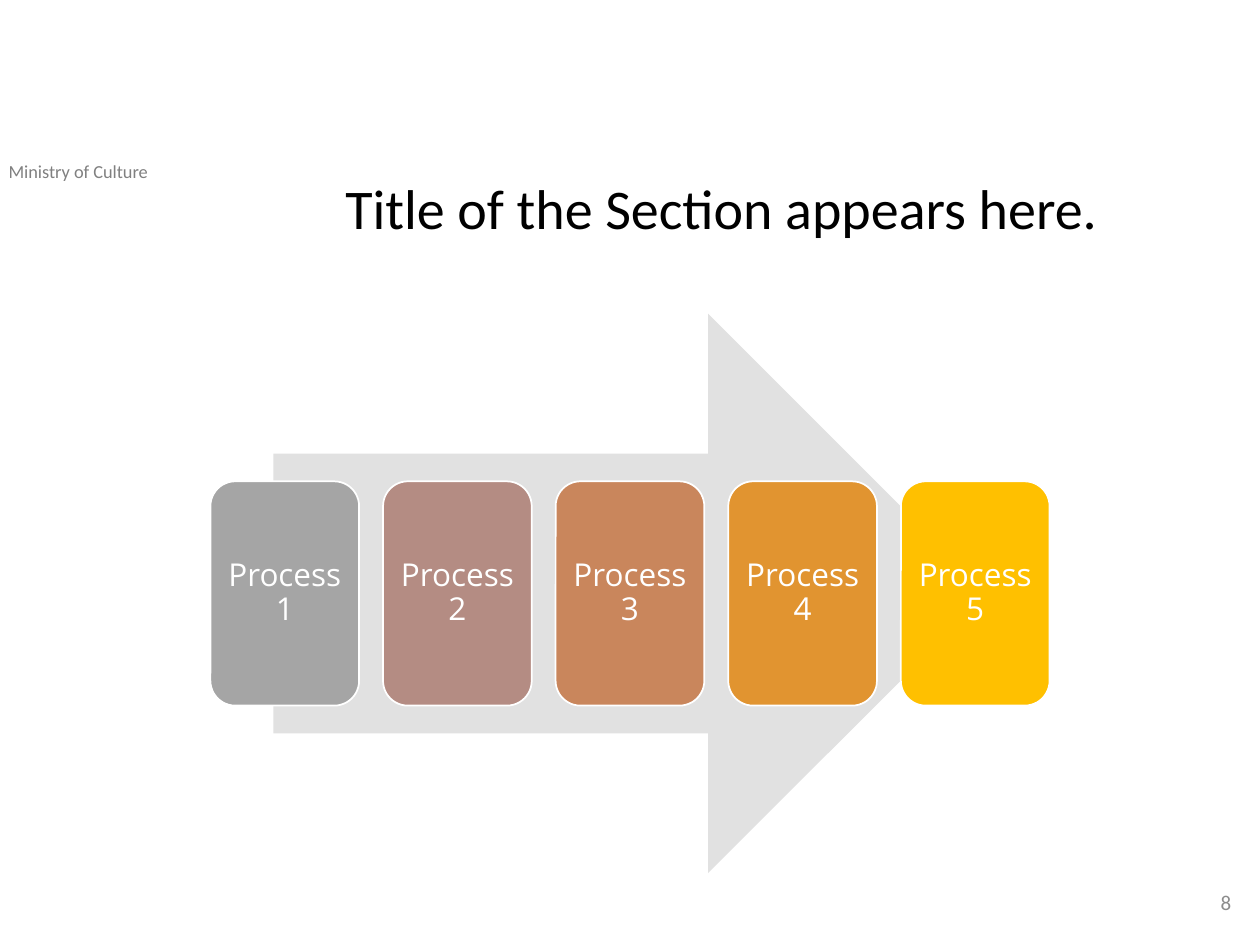
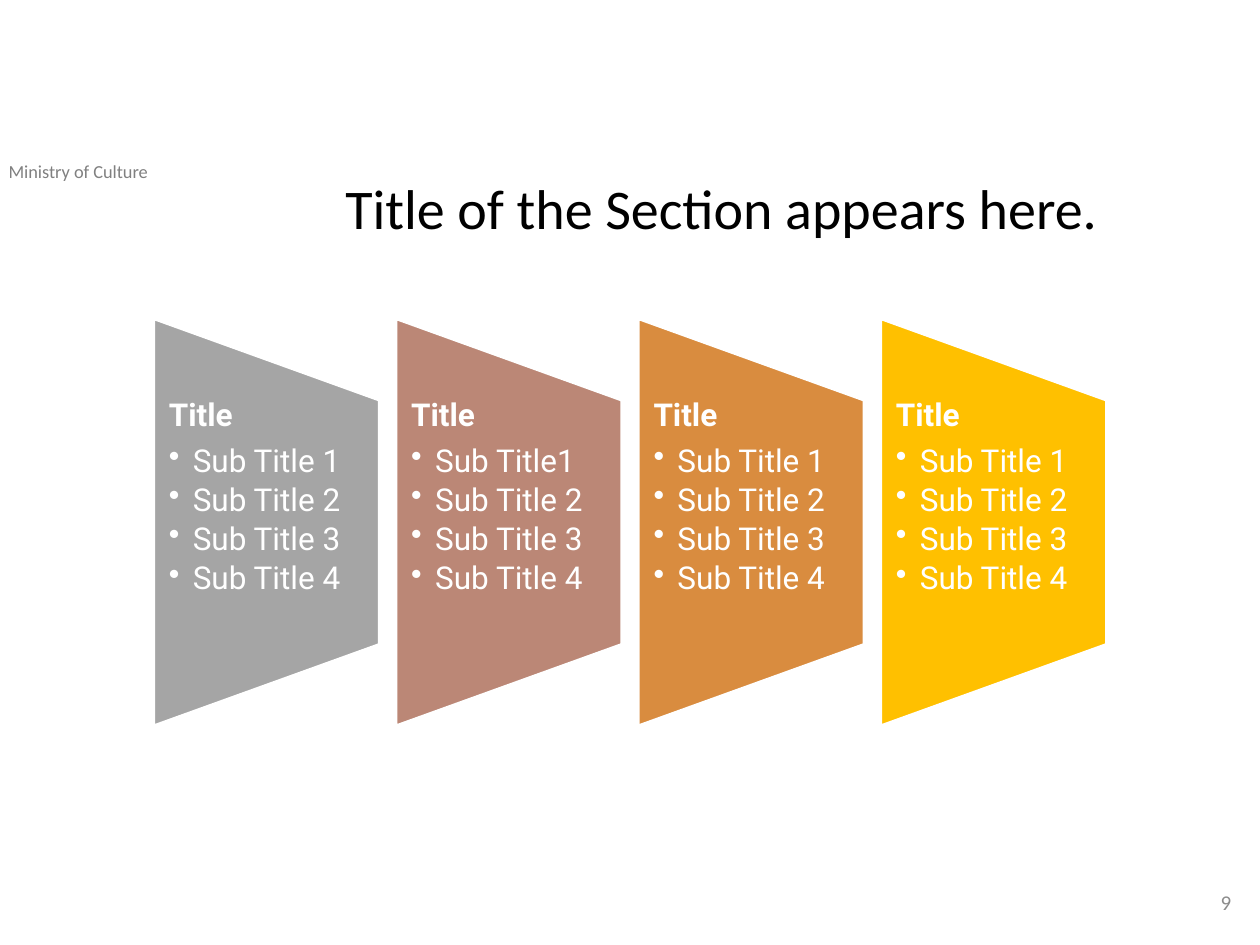
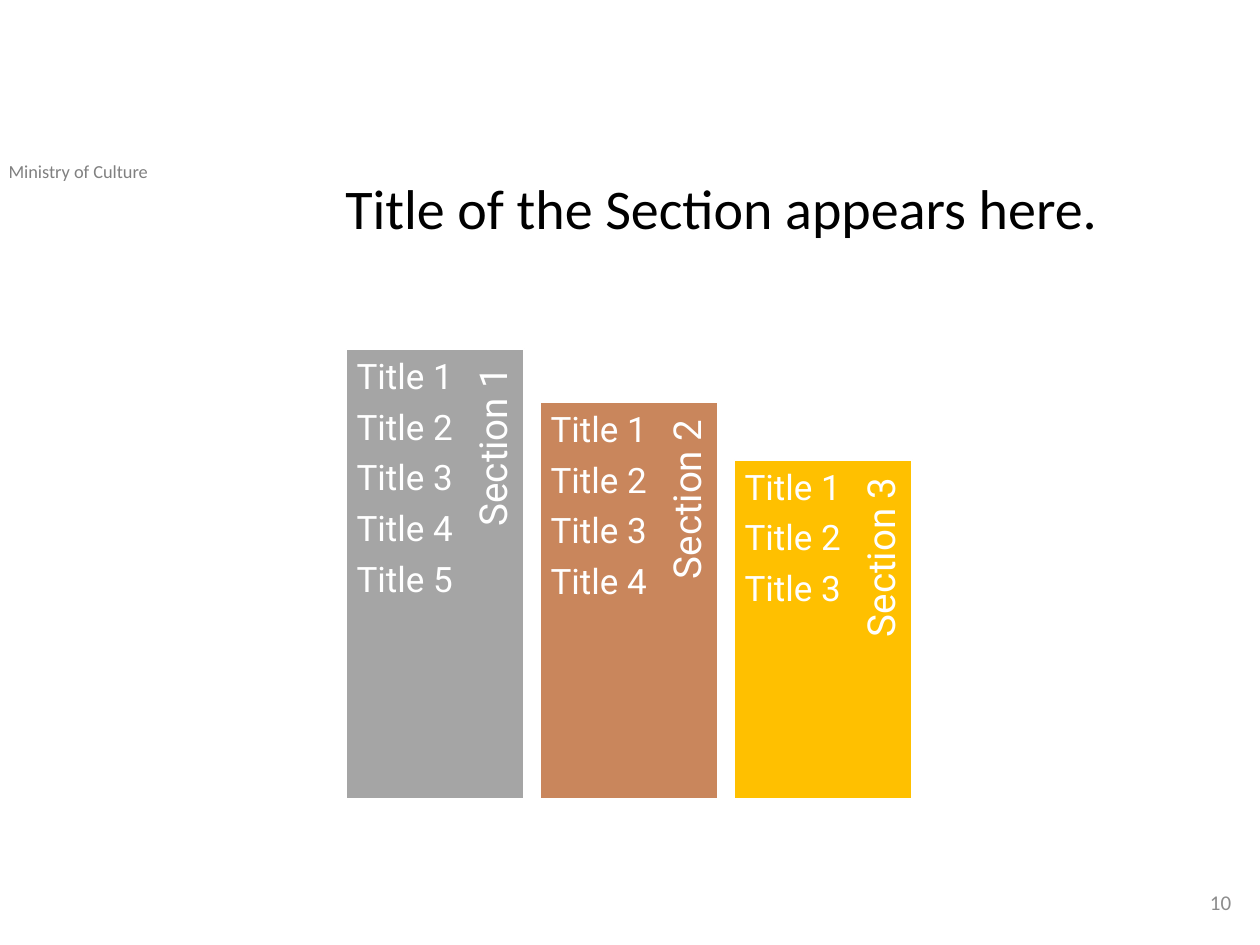
from pptx import Presentation
from pptx.dml.color import RGBColor
from pptx.enum.shapes import MSO_SHAPE
from pptx.enum.text import MSO_ANCHOR, MSO_AUTO_SIZE, PP_ALIGN
from pptx.oxml.ns import qn
from pptx.util import Inches, Pt
from lxml import etree

ARROW, ROUNDED = MSO_SHAPE.RIGHT_ARROW, MSO_SHAPE.ROUNDED_RECTANGLE
TRAPEZOID, RECTANGLE = MSO_SHAPE.FLOWCHART_MANUAL_OPERATION, MSO_SHAPE.RECTANGLE
TOP, MIDDLE = MSO_ANCHOR.TOP, MSO_ANCHOR.MIDDLE
LEFT, CENTER, RIGHT = PP_ALIGN.LEFT, PP_ALIGN.CENTER, PP_ALIGN.RIGHT

COLORS = {
    "text": "000000", "header": "808080", "number": "8C8C8C", "white": "FFFFFF",
    "arrow": "E1E1E1", "gray": "A5A5A5", "mauve": "B48C83", "rose": "BB8776",
    "copper": "C9865C", "bronze": "D98C3F", "orange": "E19430", "gold": "FFC000",
}
TITLE = "Title of the Section appears here."
WIDTH, HEIGHT = 10, 7.5


def write(frame, lines, font="Calibri", size=18, color="white", align=LEFT, anchor=TOP,
          margins=(0.1, 0.05, 0.1, 0.05), spacing=1.0, after=0, heading_after=None, bullet_indent=0):
    """Fill a frame with lines; with heading_after, the first is a bold heading."""
    frame.word_wrap = True
    frame.auto_size = MSO_AUTO_SIZE.NONE
    frame.vertical_anchor = anchor
    frame.margin_left, frame.margin_top, frame.margin_right, frame.margin_bottom = map(Inches, margins)
    for index, line in enumerate(lines):
        para = frame.add_paragraph() if index else frame.paragraphs[0]
        heading = heading_after is not None and index == 0
        if bullet_indent and not heading:
            properties = para._p.get_or_add_pPr()
            properties.set("marL", str(Inches(bullet_indent)))
            properties.set("indent", str(-Inches(bullet_indent)))
            etree.SubElement(properties, qn("a:buChar")).set("char", "•")
        para.alignment = align
        para.line_spacing = spacing
        para.space_before = Pt(0)
        para.space_after = Pt(heading_after if heading else after)
        span = para.add_run()
        span.text = line
        span.font.name, span.font.size, span.font.bold = font, Pt(size), heading
        span.font.color.rgb = RGBColor.from_string(COLORS[color])


def add_block(page, kind, left, top, width, height, fill, line_width=0):
    block = page.shapes.add_shape(kind, *map(Inches, (left, top, width, height)))
    block.shadow.inherit = False
    block.fill.solid()
    block.fill.fore_color.rgb = RGBColor.from_string(COLORS[fill])
    if line_width:
        block.line.color.rgb = RGBColor.from_string(COLORS["white"])
        block.line.width = Pt(line_width)
    else:
        block.line.fill.background()
    return block


deck = Presentation()
deck.slide_width, deck.slide_height = Inches(WIDTH), Inches(HEIGHT)

# Shared header, title and page number
pages = []
for number in (8, 9, 10):
    page = deck.slides.add_slide(deck.slide_layouts.get_by_name("Title Only"))
    title = page.shapes.title
    title.left, title.top, title.width, title.height = map(Inches, (2.64, 1.39, 6.54, 0.79))
    write(title.text_frame, [TITLE], size=32, color="text", spacing=0.9)
    header = page.shapes.add_textbox(*map(Inches, (-0.03, 1.22, 2.18, 0.28)))
    write(header.text_frame, ["Ministry of Culture"], size=10.5, color="header")
    footer = page.shapes.add_textbox(*map(Inches, (7.62, 6.96, 2.25, 0.4)))
    write(footer.text_frame, [str(number)], size=12, color="number", align=RIGHT, anchor=MIDDLE)
    pages.append(page)
process_page, panel_page, section_page = pages

# Process steps on an arrow
add_block(process_page, ARROW, 2.17, 2.49, 5.67, 4.44, "arrow")
for index, fill in enumerate(("gray", "mauve", "copper", "orange", "gold")):
    step = add_block(process_page, ROUNDED, 1.67 + 1.37 * index, 3.82, 1.18, 1.78, fill, 1)
    write(step.text_frame, [f"Process {index + 1}"], font="Open Sans", align=CENTER,
          anchor=MIDDLE, margins=(0.07,) * 4, spacing=0.9)

# Tapered panels, each turned a quarter to the left
panel_width, panel_height, panel_top = 1.79, 3.23, 2.53
turn_offset = (panel_height - panel_width) / 2
first_subtitles = ("Sub Title 1", "Sub Title1", "Sub Title 1", "Sub Title 1")
for index, fill in enumerate(("gray", "rose", "bronze", "gold")):
    left = 1.22 + 5.77 / 3 * index
    panel = add_block(panel_page, TRAPEZOID, left - turn_offset, panel_top + turn_offset,
                      panel_height, panel_width, fill, 1.5)
    panel.rotation = 270
    box = panel_page.shapes.add_textbox(*map(Inches, (left, 3.17, panel_width, 1.94)))
    subtitles = [first_subtitles[index]] + [f"Sub Title {item}" for item in (2, 3, 4)]
    write(box.text_frame, ["Title"] + subtitles, font="Roboto", margins=(0.12, 0, 0.12, 0),
          spacing=0.9, after=3, heading_after=6.5, bullet_indent=0.19)

# Section columns standing on one base line
base, label_height = 6.34, 0.37
columns = (("gray", 2.77, 5), ("copper", 3.19, 4), ("gold", 3.65, 3))
for index, (fill, top, count) in enumerate(columns):
    left, height = 2.75 + 1.54 * index, base - top
    add_block(section_page, RECTANGLE, left, top, 1.41, height, fill, 1)
    box = section_page.shapes.add_textbox(*map(Inches, (left, top, 1, height)))
    write(box.text_frame, [f"Title {item + 1}" for item in range(count)], font="Roboto", size=20,
          margins=(0.08,) * 4, spacing=0.9, after=7.4)
    length = 0.9 * height
    label = section_page.shapes.add_textbox(*map(Inches, (
        left + 1.19 - length / 2, top + (length - label_height) / 2, length, label_height)))
    label.rotation = 270
    write(label.text_frame, [f"Section {index + 1}"], font="Roboto", size=22, align=RIGHT,
          anchor=MIDDLE, margins=(0.09, 0, 0.14, 0.03), spacing=0.9)

deck.save("out.pptx")
